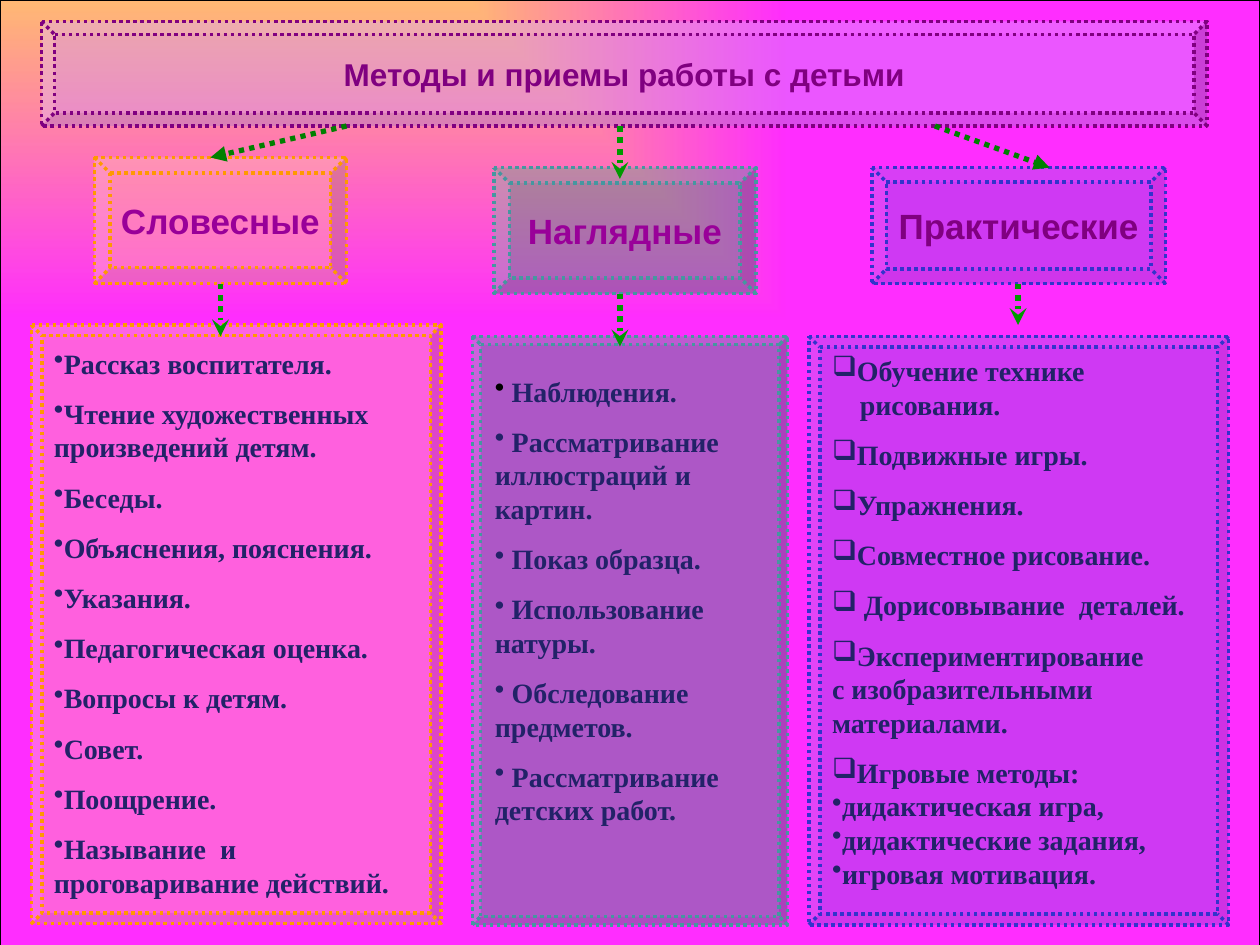
from lxml import etree
from pptx import Presentation
from pptx.dml.color import RGBColor
from pptx.enum import dml, shapes, text
from pptx.oxml import parse_xml
from pptx.oxml.ns import qn, nsdecls
from pptx.util import Inches, Pt

INK = "222268"
GAP = 9.5
TELL = ["Рассказ воспитателя.", "Чтение художественных произведений детям.",
        "Беседы.", "Объяснения, пояснения.", "Указания.",
        "Педагогическая оценка.", "Вопросы к детям.", "Совет.", "Поощрение.",
        "Называние  и проговаривание действий."]
SHOW = ["Наблюдения.", "Рассматривание иллюстраций и картин.",
        "Показ образца.", "Использование натуры.", "Обследование предметов.",
        "Рассматривание детских работ."]
TRY = [("❑", "Обучение технике", 0), (None, "рисования.", 0),
       ("❑", "Подвижные игры.", GAP), ("❑", "Упражнения.", GAP),
       ("❑", "Совместное рисование.", GAP),
       ("❑", " Дорисовывание  деталей.", GAP),
       ("❑", "Экспериментирование", GAP), (None, "с изобразительными", 0),
       (None, "материалами.", 0), ("❑", "Игровые методы:", GAP),
       ("•", "дидактическая игра,", 0), ("•", "дидактические задания,", 0),
       ("•", "игровая мотивация.", 0)]


def color(code):
    return RGBColor.from_string(code)


def place(box):
    return [Inches(n) for n in box]


def stroke(line, code, width):
    line.color.rgb = color(code)
    line.width = Pt(width)
    line.dash_style = dml.MSO_LINE.ROUND_DOT


def backdrop(slide):
    rect = slide.shapes.add_shape(shapes.MSO_SHAPE.RECTANGLE,
                                  *place((0, 0, 10, 7.53)))
    rect.shadow.inherit = False
    rect.line.color.rgb = color("000000")
    rect.line.width = Pt(0.75)
    stops = "".join(
        f'<a:gs pos="{pos}"><a:srgbClr val="{code}">'
        f'<a:alpha val="{alpha}"/></a:srgbClr></a:gs>'
        for pos, code, alpha in ((0, "FFFF00", 81000), (100000, "FF00FF", 82000)))
    grad = parse_xml(
        f'<a:gradFill {nsdecls("a")} rotWithShape="1"><a:gsLst>{stops}</a:gsLst>'
        '<a:path path="rect"><a:fillToRect r="100000" b="100000"/></a:path>'
        '</a:gradFill>')
    rect._element.spPr.find(qn("a:prstGeom")).addnext(grad)


def bevel(slide, box, fill, alpha, edge, depth):
    shape = slide.shapes.add_shape(shapes.MSO_SHAPE.BEVEL, *place(box))
    shape.shadow.inherit = False
    shape.adjustments[0] = depth
    shape.fill.solid()
    shape.fill.fore_color.rgb = color(fill)
    tint = shape._element.spPr.find(qn("a:solidFill"))[0]
    etree.SubElement(tint, qn("a:alpha"), val=str(alpha * 1000))
    stroke(shape.line, edge, 2)
    return shape


def style(para, face, size, code):
    para.font.name = face
    para.font.size = Pt(size)
    para.font.bold = True
    para.font.color.rgb = color(code)


def label(shape, words, size, code):
    frame = shape.text_frame
    frame.word_wrap = False
    frame.vertical_anchor = text.MSO_ANCHOR.MIDDLE
    para = frame.paragraphs[0]
    para.text = words
    para.alignment = text.PP_ALIGN.CENTER
    style(para, "Arial", size, code)


def arrow(slide, x1, y1, x2, y2, code, width, head):
    line = slide.shapes.add_connector(shapes.MSO_CONNECTOR.STRAIGHT,
                                      *place((x1, y1, x2, y2)))
    stroke(line.line, code, width)
    etree.SubElement(line.line._get_or_add_ln(), qn("a:tailEnd"), type=head)
    etree.SubElement(line._element.spPr, qn("a:effectLst"))


def bullets(frame, rows, anchor):
    frame.word_wrap = True
    frame.vertical_anchor = anchor
    for i, (mark, words, gap) in enumerate(rows):
        para = frame.paragraphs[0] if i == 0 else frame.add_paragraph()
        para.text = words
        para.alignment = text.PP_ALIGN.LEFT
        if gap:
            para.space_before = Pt(gap)
        if mark:
            etree.SubElement(para._p.get_or_add_pPr(), qn("a:buChar"), char=mark)
        style(para, "Times New Roman", 16, INK)


def note(slide, box, items, lead=""):
    frame = slide.shapes.add_textbox(*place(box)).text_frame
    rows = [("•", lead + words, GAP if i else 0)
            for i, words in enumerate(items)]
    bullets(frame, rows, text.MSO_ANCHOR.MIDDLE)
    return frame


def main():
    deck = Presentation()
    deck.slide_width, deck.slide_height = Inches(10), Inches(7.5)
    slide = deck.slides.add_slide(deck.slide_layouts[6])
    backdrop(slide)
    title = bevel(slide, (0.33, 0.17, 9.25, 0.83), "CC99FF", 39, "800080", 0.125)
    label(title, "Методы и приемы работы с детьми", 18, "800080")

    groups = [
        ("Словесные", "990099", (0.75, 1.25, 2, 1), (0.25, 2.58, 3.25, 4.75),
         "FFCC99", 32, "FF9900"),
        ("Наглядные", "990099", (3.92, 1.33, 2.08, 1), (3.75, 2.67, 2.5, 4.67),
         "00B050", 32, "4597A0"),
        ("Практические", "800080", (6.92, 1.33, 2.33, 0.92),
         (6.42, 2.67, 3.33, 4.67), "0070C0", 19, "3333CC")]
    for words, code, top, low, fill, alpha, edge in groups:
        label(bevel(slide, top, fill, alpha, edge, 0.125), words, 20, code)
        panel = bevel(slide, low, fill, alpha, edge, 0.026)

    bullets(panel.text_frame, TRY, text.MSO_ANCHOR.TOP)
    indent = panel.text_frame.paragraphs[1]._p.get_or_add_pPr()
    indent.set("marL", str(Inches(0.22)))

    for x1, x2, y2 in ((2.75, 1.67, 1.25), (7.42, 8.33, 1.33)):
        arrow(slide, x1, 1, x2, y2, "008000", 3, "triangle")
    for x, y1, y2 in ((4.92, 1, 1.42), (1.75, 2.25, 2.67),
                      (4.92, 2.33, 2.75), (8.08, 2.25, 2.58)):
        arrow(slide, x, y1, x, y2, "009900", 3.25, "stealth")

    note(slide, (0.33, 2.67, 3, 4.54), TELL)
    show = note(slide, (3.83, 2.83, 2.17, 3.87), SHOW, " ")
    mark = parse_xml(f'<a:buClr {nsdecls("a")}><a:srgbClr val="000000"/></a:buClr>')
    show.paragraphs[0]._p.pPr.find(qn("a:buChar")).addprevious(mark)
    deck.save("out.pptx")


if __name__ == "__main__":
    main()
